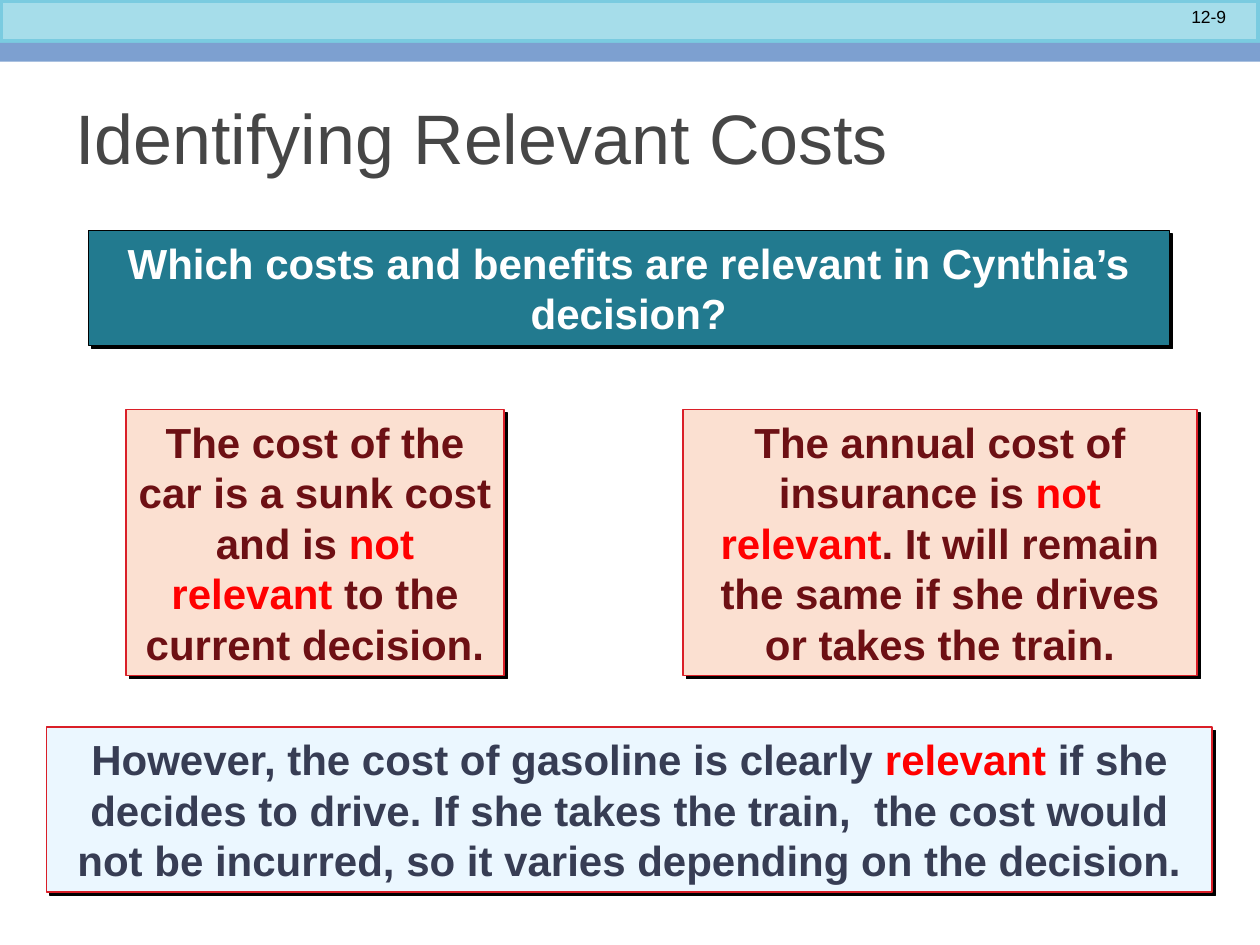
from dataclasses import dataclass

from lxml.etree import SubElement
from pptx import Presentation
from pptx.dml.color import RGBColor
from pptx.enum.shapes import MSO_SHAPE
from pptx.enum.text import MSO_ANCHOR, PP_ALIGN
from pptx.oxml.ns import qn
from pptx.util import Inches, Pt


@dataclass(frozen=True)
class Theme:
    font: str = "Arial"
    title_size: int = 40
    body_size: int = 24
    number_size: int = 10
    black: str = "000000"
    title: str = "464646"
    band: str = "A6DDEA"
    band_edge: str = "7ACBE0"
    stripe: str = "7DA0D0"
    teal: str = "227A8F"
    white: str = "FFFFFF"
    peach: str = "FBE0D1"
    maroon: str = "6D1014"
    ice: str = "EBF7FF"
    navy: str = "373D54"
    edge: str = "DA1F28"
    accent: str = "FF0000"


THEME = Theme()


def color(value):
    return RGBColor.from_string(value)


def write(shape, *spans, size, ink, bold=False, align=PP_ALIGN.LEFT, anchor=MSO_ANCHOR.MIDDLE):
    frame = shape.text_frame
    frame.word_wrap = True
    frame.vertical_anchor = anchor
    para = frame.paragraphs[0]
    para.alignment = align
    for index, text in enumerate(spans):
        span = para.add_run()
        span.text = text
        span.font.name = THEME.font
        span.font.size = Pt(size)
        span.font.bold = bold
        span.font.color.rgb = color(THEME.accent if index % 2 else ink)


def add_text(page, place, text, **style):
    box = page.shapes.add_textbox(*map(Inches, place))
    write(box, text, **style)


def add_rectangle(page, place, fill, line=None, width=0.75):
    box = page.shapes.add_shape(MSO_SHAPE.RECTANGLE, *map(Inches, place))
    box.shadow.inherit = False
    box.fill.solid()
    box.fill.fore_color.rgb = color(fill)
    if line:
        box.line.color.rgb = color(line)
        box.line.width = Pt(width)
    else:
        box.line.fill.background()
    return box


def add_hard_shadow(box):
    effects = box.element.spPr.find(qn("a:effectLst"))
    shadow = SubElement(effects, qn("a:outerShdw"), dist=str(Pt(2.8)), dir="2700000",
                        algn="ctr", rotWithShape="0")
    SubElement(shadow, qn("a:srgbClr"), val=THEME.black)


def add_callout(page, place, *spans, fill, ink, line=THEME.edge):
    box = add_rectangle(page, place, fill, line)
    add_hard_shadow(box)
    write(box, *spans, size=THEME.body_size, ink=ink, bold=True, align=PP_ALIGN.CENTER)


def add_header(page):
    add_rectangle(page, (0, 0, 10, 0.34), THEME.band, THEME.band_edge, 4)
    add_rectangle(page, (0, 0.34, 10, 0.15), THEME.stripe)
    add_text(page, (8.5, 0, 1.33, 0.27), "12-9", size=THEME.number_size,
             ink=THEME.black, align=PP_ALIGN.RIGHT, anchor=MSO_ANCHOR.TOP)


def add_title(page, text):
    title = page.shapes.title
    title.left, title.top, title.width, title.height = map(Inches, (0.5, 0.5, 9, 1.17))
    write(title, text, size=THEME.title_size, ink=THEME.title)


def main():
    deck = Presentation()
    deck.slide_width, deck.slide_height = Inches(10), Inches(7.5)
    page = deck.slides.add_slide(deck.slide_layouts[6])
    add_header(page)
    add_text(page, (0.5, 0.5, 9, 1.17), "Identifying Relevant Costs",
             size=THEME.title_size, ink=THEME.title)
    add_callout(page, (0.7, 1.83, 8.58, 0.91),
                "Which costs and benefits are relevant in Cynthia’s decision?",
                fill=THEME.teal, ink=THEME.white, line=THEME.black)
    add_callout(page, (1, 3.25, 3, 2.11),
                "The cost of the car is a sunk cost and is ", "not relevant",
                " to the current decision.", fill=THEME.peach, ink=THEME.maroon)
    add_callout(page, (5.42, 3.25, 4.08, 2.11),
                "The annual cost of insurance is ", "not relevant",
                ". It will remain the same if she drives or takes the train.",
                fill=THEME.peach, ink=THEME.maroon)
    add_callout(page, (0.37, 5.77, 9.25, 1.31),
                "However, the cost of gasoline is clearly ", "relevant ",
                "if she decides to drive. If she takes the train,  the cost would "
                "not be incurred, so it varies depending on the decision.",
                fill=THEME.ice, ink=THEME.navy)
    deck.save("out.pptx")


if __name__ == "__main__":
    main()
